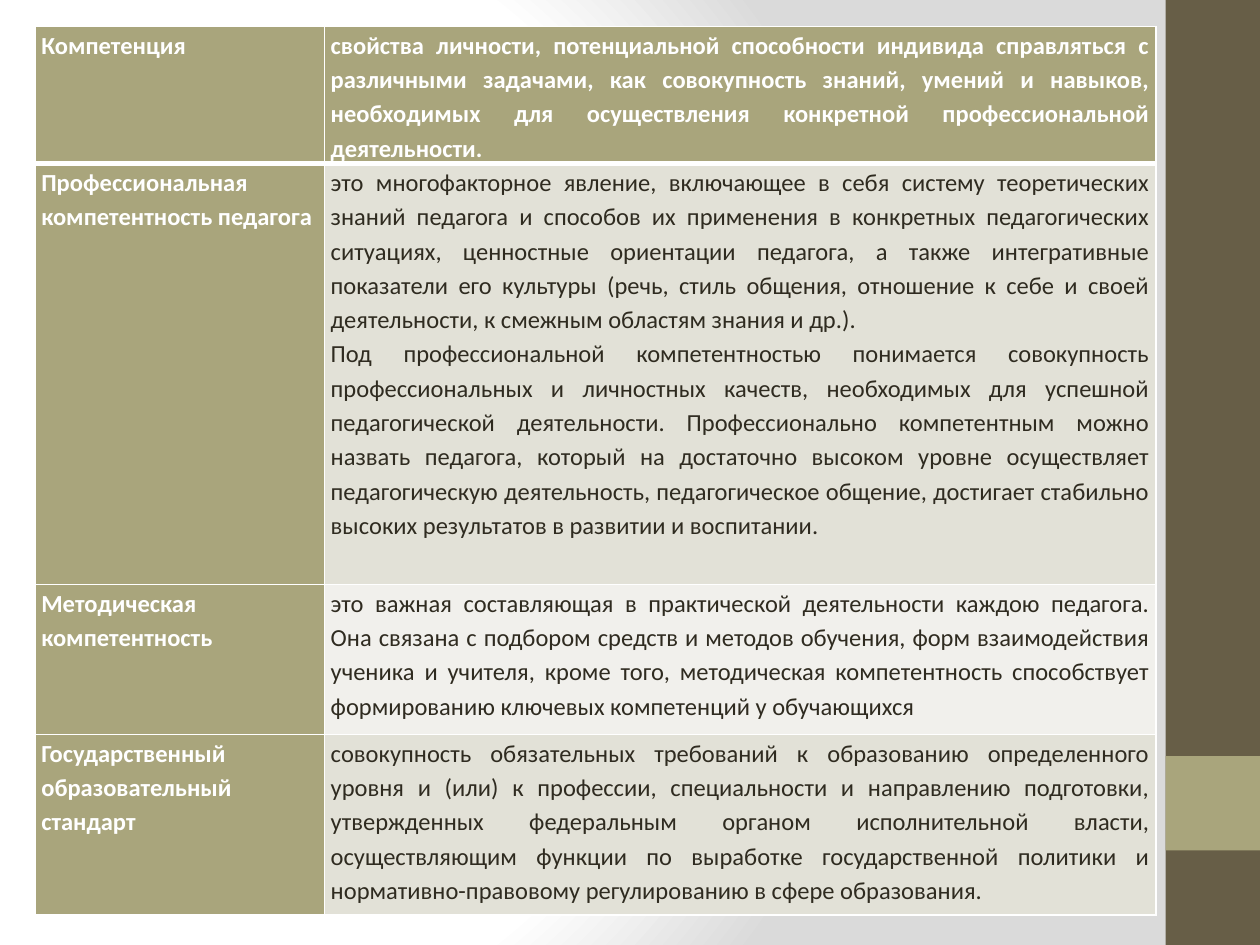
from lxml import etree
from pptx import Presentation
from pptx.dml.color import RGBColor as RGB
from pptx.enum.shapes import MSO_SHAPE as Shape
from pptx.enum.text import PP_ALIGN as Align
from pptx.oxml import parse_xml
from pptx.oxml.ns import nsdecls, qn
from pptx.util import Pt

COLORS = {
    "white": "FFFFFF", "backdrop": "DADADA", "brown": "675E47",
    "olive": "A9A57C", "ink": "2F2B20", "band": "E2E1D7", "pale": "F1F0EC",
}

# term, term alignment, definition paragraphs, definition fill, row height
TERMS = [
    ("Компетенция", Align.LEFT, [
        "свойства личности, потенциальной способности индивида справляться с "
        "различными задачами, как совокупность знаний, умений и навыков, "
        "необходимых для осуществления конкретной профессиональной деятельности.",
    ], "olive", 75.6),
    ("Профессиональная компетентность педагога", Align.JUSTIFY, [
        "это многофакторное явление, включающее в себя систему теоретических "
        "знаний педагога и способов их применения в конкретных педагогических "
        "ситуациях, ценностные ориентации педагога, а также интегративные "
        "показатели его культуры (речь, стиль общения, отношение к себе и своей "
        "деятельности, к смежным областям знания и др.).",
        "Под профессиональной компетентностью понимается совокупность "
        "профессиональных и личностных качеств, необходимых для успешной "
        "педагогической деятельности. Профессионально компетентным можно "
        "назвать педагога, который на достаточно высоком уровне осуществляет "
        "педагогическую деятельность, педагогическое общение, достигает "
        "стабильно высоких результатов в развитии и воспитании.",
    ], "band", 240.5),
    ("Методическая компетентность", Align.LEFT, [
        "это важная составляющая в практической деятельности каждою педагога. "
        "Она связана с подбором средств и методов обучения, форм взаимодействия "
        "ученика и учителя, кроме того, методическая компетентность "
        "способствует формированию ключевых компетенций у обучающихся",
    ], "pale", 85.7),
    ("Государственный образовательный стандарт", Align.LEFT, [
        "совокупность обязательных требований к образованию определенного "
        "уровня и (или) к профессии, специальности и направлению подготовки, "
        "утвержденных федеральным органом исполнительной власти, осуществляющим "
        "функции по выработке государственной политики и нормативно-правовому "
        "регулированию в сфере образования.",
    ], "band", 103),
]
CELL_MARGINS = {"margin_left": Pt(3.6), "margin_right": Pt(3.6),
                "margin_top": 0, "margin_bottom": 0}


def fill_cell(cell, paragraphs, fill, para_format, font_format, bottom_width):
    """Write the paragraphs and set the fill and white borders of a cell."""
    for attr, value in CELL_MARGINS.items():
        setattr(cell, attr, value)
    cell.fill.solid()
    cell.fill.fore_color.rgb = RGB.from_string(COLORS[fill])

    cell.text = "\n".join(paragraphs)
    for paragraph in cell.text_frame.paragraphs:
        for attr, value in para_format.items():
            setattr(paragraph, attr, value)
        font = paragraph.runs[0].font
        font.name, font.size = "Calibri", Pt(14)
        font.bold = font_format["bold"]
        font.color.rgb = RGB.from_string(COLORS[font_format["color"]])

    # Borders must stand before the fill
    cell_props = cell._tc.get_or_add_tcPr()
    for index, side in enumerate("LRTB"):
        width = bottom_width if side == "B" else 1
        border = etree.Element(qn(f"a:ln{side}"), w=str(Pt(width)))
        line_fill = etree.SubElement(border, qn("a:solidFill"))
        etree.SubElement(line_fill, qn("a:srgbClr"), val=COLORS["white"])
        cell_props.insert(index, border)


prs = Presentation()
prs.slide_width, prs.slide_height = Pt(720), Pt(540)
slide = prs.slides.add_slide(prs.slide_layouts[6])

# Radial background
slide.background.fill.solid()
solid = slide._element.find(f".//{qn('p:bgPr')}/{qn('a:solidFill')}")
stops = "".join(
    f'<a:gs pos="{pos * 1000}"><a:srgbClr val="{COLORS[color]}"/></a:gs>'
    for pos, color in [(0, "white"), (75, "white"), (100, "backdrop")])
solid.getparent().replace(solid, parse_xml(
    f'<a:gradFill rotWithShape="1" {nsdecls("a")}><a:gsLst>{stops}</a:gsLst>'
    '<a:path path="circle"><a:fillToRect l="20000" t="50000" r="100000" b="50000"/>'
    '</a:path></a:gradFill>'))

# Side strip with its accent
for top, height, color in [(0, 540, "brown"), (432, 54, "olive")]:
    strip = slide.shapes.add_shape(Shape.RECTANGLE, Pt(666), Pt(top), Pt(54), Pt(height))
    strip.shadow.inherit = False
    strip.fill.solid()
    strip.fill.fore_color.rgb = RGB.from_string(COLORS[color])
    strip.line.fill.background()

# Glossary
glossary = slide.shapes.add_table(
    len(TERMS), 2, Pt(20), Pt(15.2), Pt(640.6), Pt(504.8)).table
for column, width in zip(glossary.columns, (165.4, 475.2)):
    column.width = Pt(width)

for row, (term, alignment, definition, fill, height) in enumerate(TERMS):
    glossary.rows[row].height = Pt(height)
    is_header = row == 0
    bottom_width = 3 if is_header else 1
    heading_font = {"bold": True, "color": "white"}
    body_font = heading_font if is_header else {"bold": False, "color": "ink"}
    fill_cell(glossary.cell(row, 0), [term], "olive",
              {"alignment": alignment, "line_spacing": 1.15, "space_after": Pt(10)},
              heading_font, bottom_width)
    fill_cell(glossary.cell(row, 1), definition, fill,
              {"alignment": Align.JUSTIFY, "line_spacing": 1.15, "space_after": Pt(0)},
              body_font, bottom_width)

prs.save("out.pptx")
